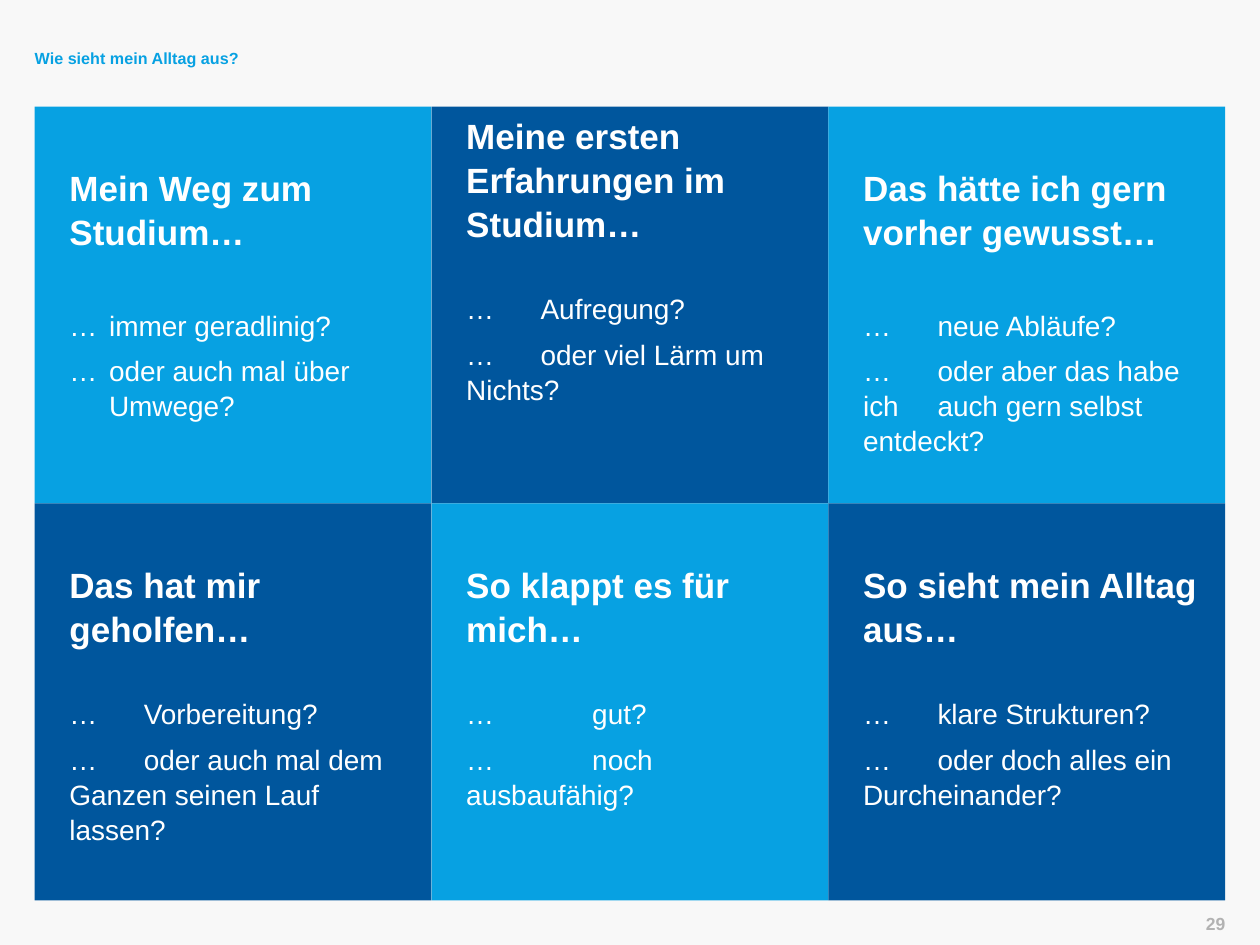
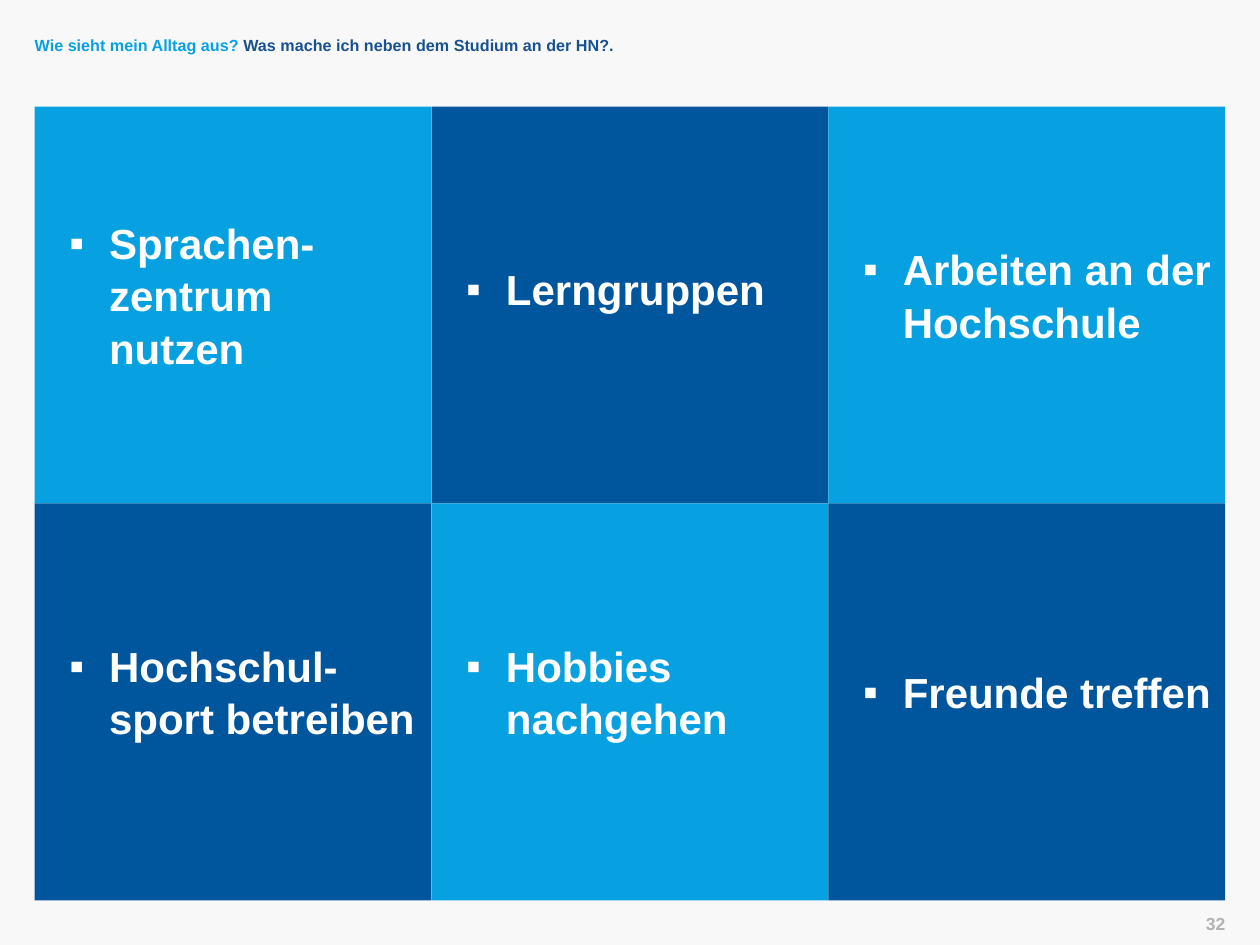
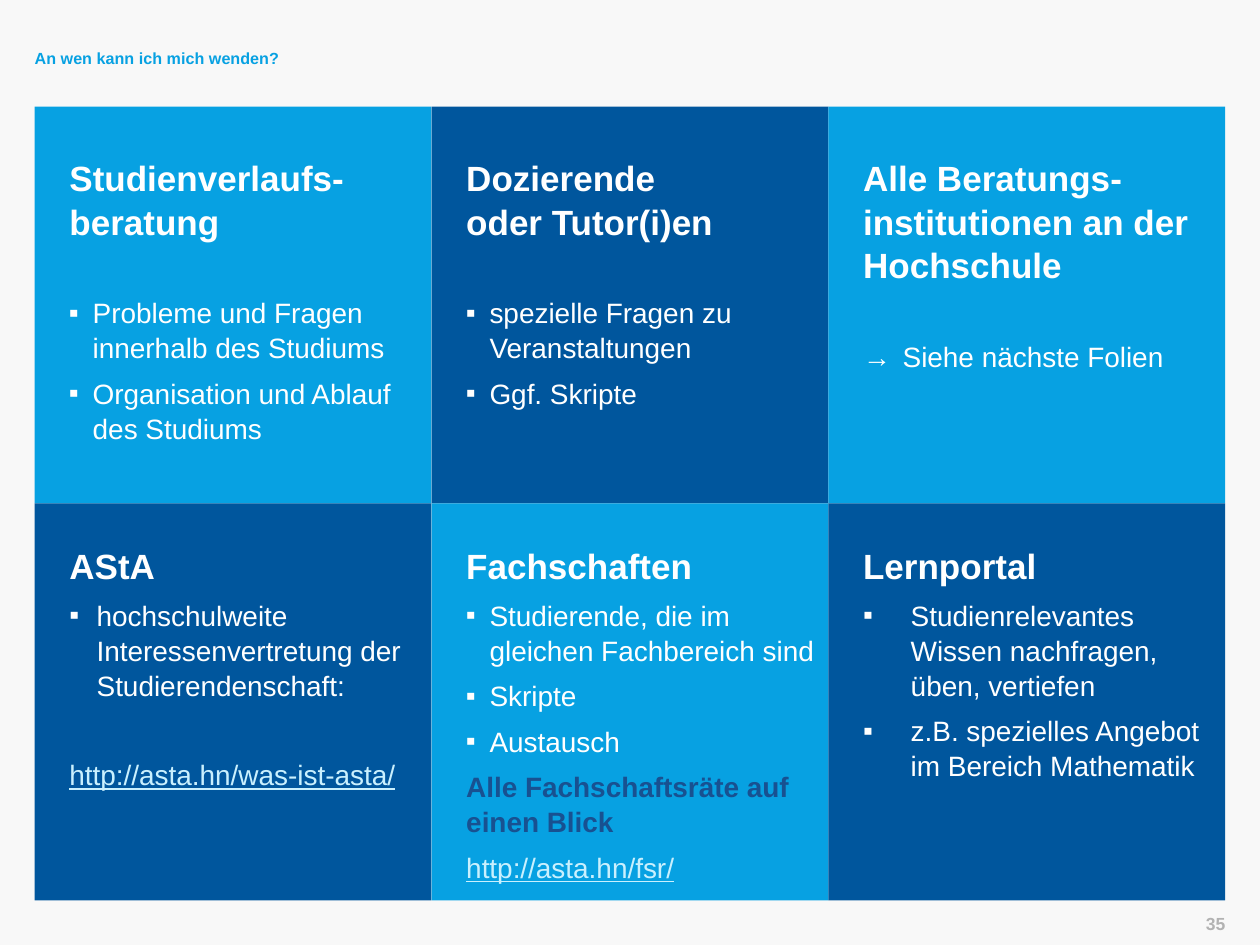
from lxml import etree
from pptx import Presentation
from pptx.dml.color import RGBColor
from pptx.enum.shapes import MSO_SHAPE as SHAPE
from pptx.enum.text import MSO_ANCHOR as ANCHOR, PP_ALIGN as ALIGN
from pptx.oxml.ns import qn
from pptx.util import Cm, Pt

COLORS = {
    "background": "F8F8F8",
    "light": "07A1E2",
    "dark": "00569D",
    "white": "FFFFFF",
    "navy": "185191",
    "link": "C9F0FE",
    "grey": "B2B2B2",
}
FONT = "Arial"
LINE_SPACING = 1.04
MARGIN, GRID_TOP, TILE, COLUMNS = 0.7, 2.15, 8, 3
TAB = 1.5

# left: text edge, hang: width of the bullet or lead-in, before: space before (pt)
STYLES = {
    "head": {"size": 20, "bold": True},
    "text": {"before": 6, "tab": TAB},
    "hanging": {"before": 6, "left": 1.5, "hang": 0.8},
    "bullet": {"before": 6, "left": 1.17, "hang": 0.48, "bullet": "▪"},
    "key": {"size": 24, "bold": True, "left": 1.5, "hang": 0.8, "bullet": "▪"},
    "link": {"before": 6, "color": "link", "underline": True},
    "note": {"before": 6, "color": "navy", "bold": True},
}
BASE = {"size": 16, "bold": False, "color": "white", "left": MARGIN}


class Deck:
    def __init__(self):
        self.prs = Presentation()
        self.prs.slide_width, self.prs.slide_height = Cm(25.4), Cm(19.05)
        self.s = None

    def slide(self, title, number, title_top=0.79):
        self.s = self.prs.slides.add_slide(self.prs.slide_layouts[6])
        fill = self.s.background.fill
        fill.solid()
        fill.fore_color.rgb = self.rgb("background")
        self.title(title, title_top)
        self.page_number(number)

    @staticmethod
    def rgb(name):
        return RGBColor.from_string(COLORS[name])

    @staticmethod
    def frame(sp, **fmt):
        """Set up the text frame of a shape and return it."""
        tf = sp.text_frame
        for name, value in {"word_wrap": True, **fmt}.items():
            setattr(tf, name, value)
        return tf

    def run(self, p, text, fmt):
        r = p.add_run()
        r.text = text
        values = {
            "name": FONT,
            "size": Pt(fmt["size"]),
            "bold": fmt["bold"],
            "underline": fmt.get("underline"),
        }
        for name, value in values.items():
            setattr(r.font, name, value)
        r.font.color.rgb = self.rgb(fmt["color"])

    def paragraph(self, p, style, content, **changes):
        """Fill p; content is a string or a list of (text, run format)."""
        fmt = {**BASE, **STYLES[style], **changes}
        p.line_spacing = LINE_SPACING
        p.space_before = Pt(fmt.get("before", 0))
        p.alignment = ALIGN.LEFT
        pPr = p._p.get_or_add_pPr()
        pPr.set("marL", str(Cm(fmt["left"])))
        pPr.set("indent", str(-Cm(fmt.get("hang", 0))))
        if "tab" in fmt:
            pPr.set("defTabSz", str(Cm(fmt["tab"])))
        if "bullet" in fmt:
            etree.SubElement(pPr, qn("a:buFont")).set("typeface", FONT)
            etree.SubElement(pPr, qn("a:buChar")).set("char", fmt["bullet"])
        else:
            etree.SubElement(pPr, qn("a:buNone"))
        runs = [(content, {})] if isinstance(content, str) else content
        for text, run_fmt in runs:
            self.run(p, text, {**fmt, **run_fmt})

    def title(self, runs, top):
        sp = self.s.shapes.add_textbox(Cm(0.45), Cm(top), Cm(16.15), Cm(0.76))
        tf = self.frame(sp, vertical_anchor=ANCHOR.MIDDLE)
        for text, color in runs:
            self.run(tf.paragraphs[0], text,
                     {"size": 9.2, "bold": True, "color": color})

    def page_number(self, number):
        sp = self.s.shapes.add_textbox(Cm(20.7), Cm(18.29), Cm(4), Cm(0.5))
        p = self.frame(sp, margin_right=0).paragraphs[0]
        p.alignment = ALIGN.RIGHT
        self.run(p, str(number), {"size": 10, "bold": True, "color": "grey"})

    def tile(self, index, paragraphs, inset_top=0.13, inset_bottom=0.13,
             anchor=ANCHOR.TOP):
        row, col = divmod(index, COLUMNS)
        sp = self.s.shapes.add_shape(
            SHAPE.RECTANGLE, Cm(MARGIN + col * TILE), Cm(GRID_TOP + row * TILE),
            Cm(TILE), Cm(TILE))
        sp.shadow.inherit = False
        sp.fill.solid()
        sp.fill.fore_color.rgb = self.rgb("dark" if index % 2 else "light")
        sp.line.fill.background()
        tf = self.frame(sp, margin_left=0, margin_right=Cm(0.25),
                        margin_top=Cm(inset_top), margin_bottom=Cm(inset_bottom),
                        vertical_anchor=anchor)
        for i, (style, content, *changes) in enumerate(paragraphs):
            p = tf.add_paragraph() if i else tf.paragraphs[0]
            self.paragraph(p, style, content, **(changes[0] if changes else {}))


# heading, top inset, gap below heading, style, changes, answers
QUESTIONS = [
    ("Mein Weg zum Studium…", 1.18, 31, "hanging", {},
     ["immer geradlinig?", "oder auch mal über Umwege?"]),
    ("Meine ersten Erfahrungen im Studium…", 0.13, 26.5, "text", {},
     ["Aufregung?", "oder viel Lärm um \tNichts?"]),
    ("Das hätte ich gern vorher gewusst…", 1.18, 31, "text", {},
     ["neue Abläufe?", "oder aber das habe ich \tauch gern selbst \tentdeckt?"]),
    ("Das hat mir geholfen…", 1.18, 26.5, "text", {},
     ["Vorbereitung?", "oder auch mal dem \tGanzen seinen Lauf \tlassen?"]),
    ("So klappt es für mich…", 1.18, 26.5, "text", {"tab": 2.54},
     ["gut?", "noch ausbaufähig?"]),
    ("So sieht mein Alltag aus…", 1.18, 26.5, "text", {},
     ["klare Strukturen?", "oder doch alles ein \tDurcheinander?"]),
]

# activity, bottom inset that lifts the centred text
ACTIVITIES = [
    ("Sprachen-zentrum nutzen", 0.57),
    ("Lerngruppen", 0.83),
    ("Arbeiten an der Hochschule", 0.57),
    ("Hochschul-sport betreiben", 0.57),
    ("Hobbies nachgehen", 0.57),
    ("Freunde treffen", 0.57),
]

FIRST = {"before": 30}
WIDE = {"left": 1.66, "hang": 0.96}
CONTACTS = [
    (1.18 - 0.21, [
        ("head", "Studienverlaufs-beratung"),
        ("bullet", "Probleme und Fragen innerhalb des Studiums", FIRST),
        ("bullet", "Organisation und Ablauf des Studiums")]),
    (0.97, [
        ("head", "Dozierende"),
        ("head", "oder Tutor(i)en"),
        ("bullet", "spezielle Fragen zu Veranstaltungen", FIRST),
        ("bullet", "Ggf. Skripte")]),
    (0.97, [
        ("head", "Alle Beratungs-institutionen an der Hochschule"),
        ("text", [("→", {"bold": True}), (" ", {"bold": True, "size": 24}),
                  ("Siehe nächste Folien", {})], {"before": 21.5})]),
    (0.8, [
        ("head", "AStA"),
        ("bullet", "hochschulweite Interessenvertretung der Studierendenschaft:",
         {"left": 1.25, "hang": 0.55}),
        ("link", "http://asta.hn/was-ist-asta/", {"before": 31})]),
    (0.8, [
        ("head", "Fachschaften"),
        ("bullet", "Studierende, die im gleichen Fachbereich sind"),
        ("bullet", "Skripte"),
        ("bullet", "Austausch"),
        ("note", "Alle Fachschaftsräte auf einen Blick"),
        ("link", "http://asta.hn/fsr/")]),
    (0.8, [
        ("head", "Lernportal"),
        ("bullet", "Studienrelevantes Wissen nachfragen, üben, vertiefen", WIDE),
        ("bullet", "z.B. spezielles Angebot im Bereich Mathematik", WIDE)]),
]


def main():
    deck = Deck()

    deck.slide([("Wie sieht mein Alltag aus?", "light")], 29)
    for i, (head, inset, gap, style, changes, answers) in enumerate(QUESTIONS):
        first, second = (f"… \t{answer}" for answer in answers)
        deck.tile(i, [("head", head),
                      (style, first, {**changes, "before": gap}),
                      (style, second, changes)], inset)

    deck.slide([("Wie sieht mein Alltag aus? ", "light"),
                ("Was mache ich neben dem Studium an der HN?.", "navy")],
               32, title_top=0.53)
    for i, (activity, inset) in enumerate(ACTIVITIES):
        deck.tile(i, [("key", activity)], inset_bottom=inset,
                  anchor=ANCHOR.MIDDLE)

    deck.slide([("An wen kann ich mich wenden?", "light")], 35)
    for i, (inset, paragraphs) in enumerate(CONTACTS):
        deck.tile(i, paragraphs, inset)

    deck.prs.save("out.pptx")


if __name__ == "__main__":
    main()
